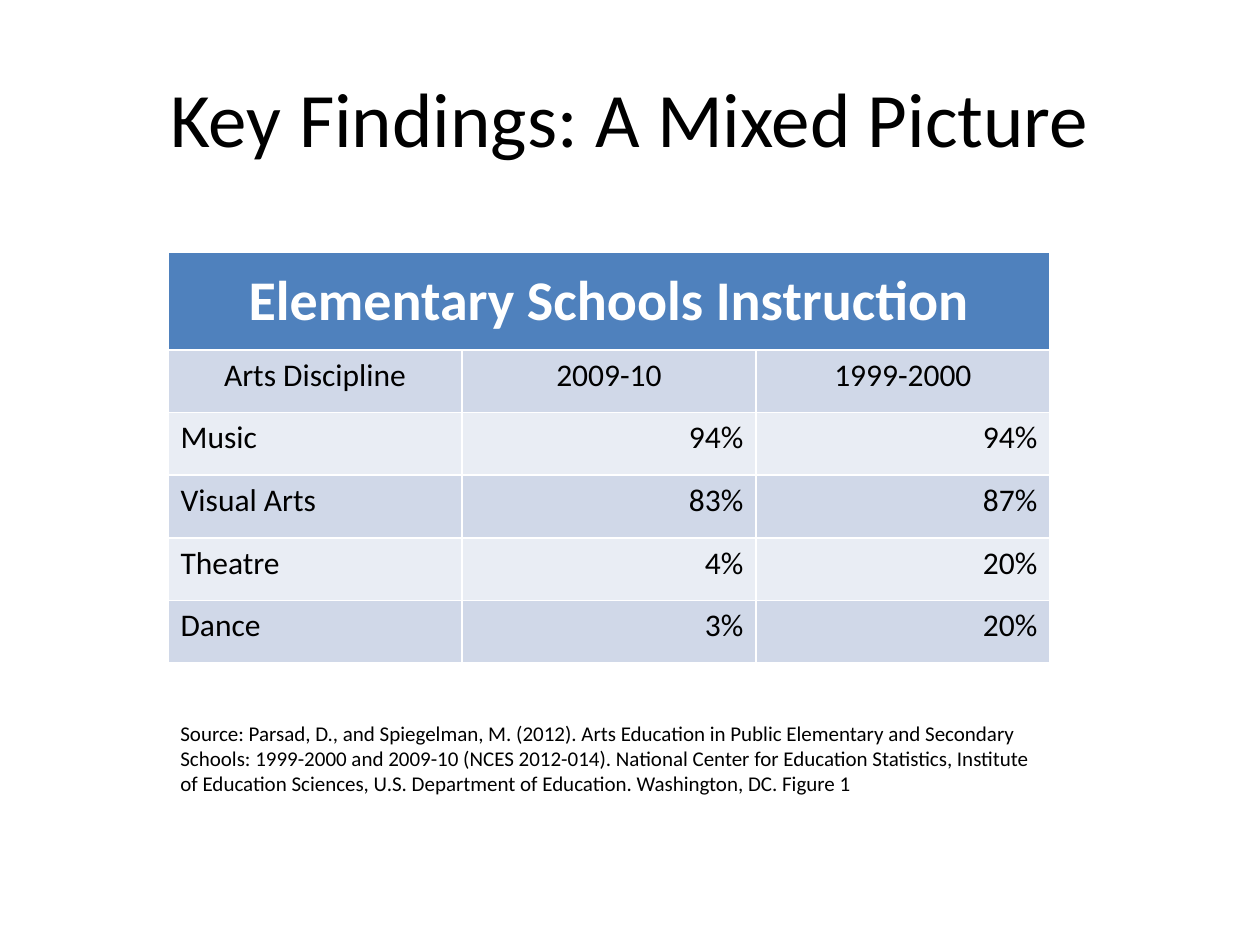
import pptx
import pptx.util
import pptx.dml.color
import pptx.enum.text

Pt = pptx.util.Pt
RGB = pptx.dml.color.RGBColor.from_string
ALIGN = pptx.enum.text.PP_ALIGN
ANCHOR = pptx.enum.text.MSO_ANCHOR

theme = {
    "font": "Calibri",
    "ink": RGB("000000"),
    "white": RGB("FFFFFF"),
    "head": RGB("4F81BD"),
    "bands": [RGB("D0D8E8"), RGB("E9EDF4")],
    "title": Pt(44),
    "banner": Pt(32),
    "body": Pt(18),
    "note": Pt(12),
}


def write(frame, text, size, color, align, bold=False):
    frame.word_wrap = True
    para = frame.paragraphs[0]
    para.text = text
    para.alignment = align
    para.font.name = theme["font"]
    para.font.size = size
    para.font.bold = bold
    para.font.color.rgb = color


deck = pptx.Presentation()
deck.slide_width, deck.slide_height = Pt(720), Pt(540)
slide = deck.slides.add_slide(deck.slide_layouts[6])

title = slide.shapes.add_textbox(Pt(36), Pt(21.6), Pt(648), Pt(90)).text_frame
title.vertical_anchor = ANCHOR.MIDDLE
write(title, "Key Findings: A Mixed Picture", theme["title"], theme["ink"], ALIGN.CENTER)

rows = [
    ["Arts Discipline", "2009-10", "1999-2000"],
    ["Music", "94%", "94%"],
    ["Visual Arts", "83%", "87%"],
    ["Theatre", "4%", "20%"],
    ["Dance", "3%", "20%"],
]
table = slide.shapes.add_table(
    len(rows) + 1, 3, Pt(96), Pt(144), Pt(504), Pt(235)
).table
for col in table.columns:
    col.width = Pt(168)
for row in table.rows:
    row.height = Pt(35.8)
table.rows[0].height = Pt(56)

banner = table.cell(0, 0)
banner.merge(table.cell(0, 2))
banner.vertical_anchor = ANCHOR.MIDDLE
banner.fill.solid()
banner.fill.fore_color.rgb = theme["head"]
write(banner.text_frame, "Elementary Schools Instruction",
      theme["banner"], theme["white"], ALIGN.CENTER, True)

for r, row in enumerate(rows):
    for c, text in enumerate(row):
        cell = table.cell(r + 1, c)
        cell.fill.solid()
        cell.fill.fore_color.rgb = theme["bands"][r % 2]
        align = ALIGN.CENTER if r == 0 else ALIGN.RIGHT if c else ALIGN.LEFT
        write(cell.text_frame, text, theme["body"], theme["ink"], align)

note = slide.shapes.add_textbox(Pt(96), Pt(408), Pt(510), Pt(51)).text_frame
write(
    note,
    "Source: Parsad, D., and Spiegelman, M. (2012). Arts Education in Public "
    "Elementary and Secondary Schools: 1999-2000 and 2009-10 (NCES 2012-014). "
    "National Center for Education Statistics, Institute of Education Sciences, "
    "U.S. Department of Education. Washington, DC. Figure 1",
    theme["note"], theme["ink"], ALIGN.LEFT,
)

deck.save("out.pptx")
